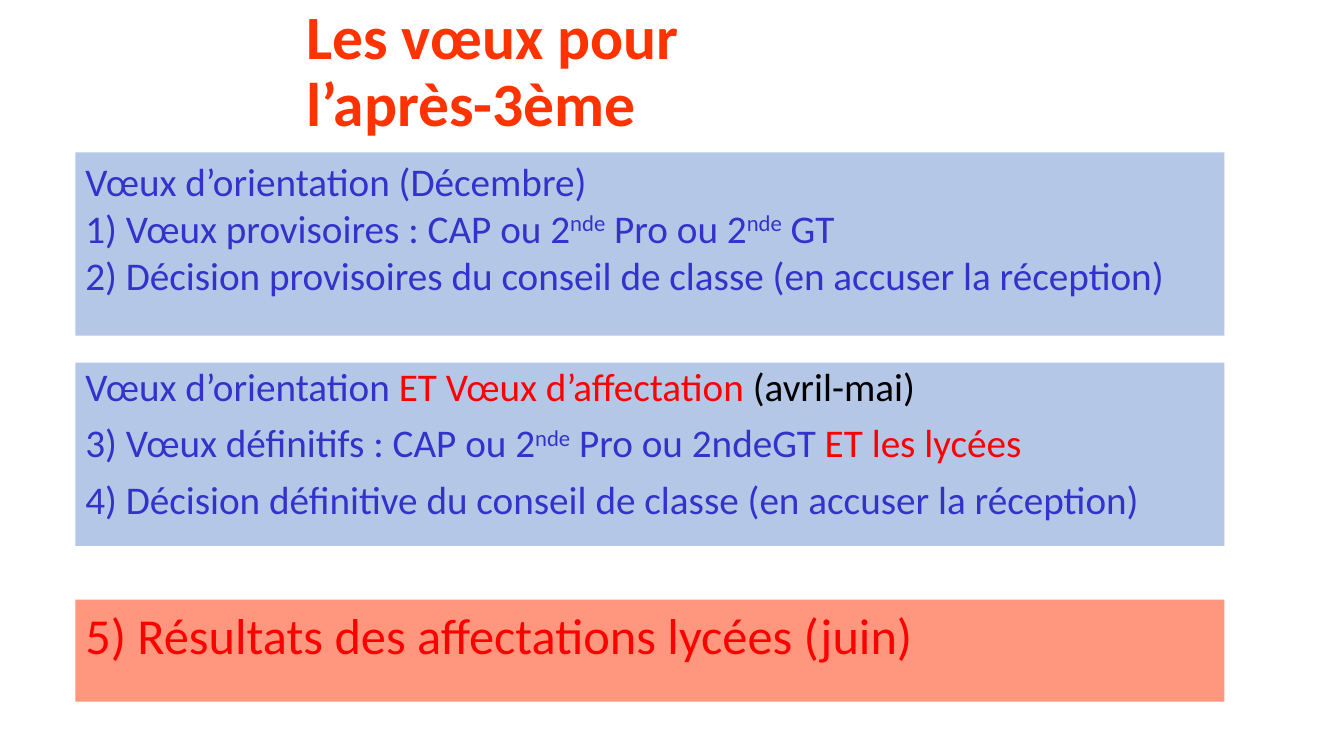
import pptx
import pptx.util
from pptx.dml.color import RGBColor
from pptx.enum.shapes import MSO_SHAPE
from pptx.enum.text import MSO_ANCHOR, MSO_AUTO_SIZE, PP_ALIGN
from pptx.util import Cm


class Theme:
    font = "Calibri"
    title = "FF3300"
    blue, red, black = "3333CC", "FF0000", "000000"
    blue_fill, red_fill = "B4C7E7", "FF967D"
    title_size, body_size, result_size = 44, 28, 36


def add_run(p, text, size, color, bold=False, superscript=False):
    r = p.add_run()
    r.text = text
    r.font.name = Theme.font
    r.font.size = pptx.util.Pt(size)
    r.font.bold = bold
    r.font.color.rgb = RGBColor.from_string(color)
    if superscript:
        r._r.get_or_add_rPr().set("baseline", "30000")


class Deck:
    left, width = Cm(1.9), Cm(28.96)

    def __init__(self, prs, theme):
        self.theme = theme
        self.s = prs.slides.add_slide(prs.slide_layouts[5])

    def title(self, text, left, top, width, height):
        sp = self.s.shapes.title
        sp.left, sp.top, sp.width, sp.height = left, top, width, height
        tf = sp.text_frame
        tf.word_wrap = True
        tf.auto_size = MSO_AUTO_SIZE.NONE
        tf.vertical_anchor = MSO_ANCHOR.MIDDLE
        p = tf.paragraphs[0]
        p.alignment = PP_ALIGN.LEFT
        p.line_spacing = 0.9
        add_run(p, text, self.theme.title_size, self.theme.title, bold=True)

    def panel(self, top, height, fill, size, lines, spacing=1.0, before=0):
        """Each line is a list of (text, colour) runs; "nde" is raised."""
        sp = self.s.shapes.add_shape(MSO_SHAPE.RECTANGLE, self.left, top, self.width, height)
        sp.shadow.inherit = False
        sp.fill.solid()
        sp.fill.fore_color.rgb = RGBColor.from_string(fill)
        sp.line.fill.background()
        tf = sp.text_frame
        tf.word_wrap = True
        tf.vertical_anchor = MSO_ANCHOR.TOP
        for i, line in enumerate(lines):
            p = tf.add_paragraph() if i else tf.paragraphs[0]
            p.alignment = PP_ALIGN.LEFT
            p.line_spacing = spacing
            p.space_before = pptx.util.Pt(before)
            for text, color in line:
                add_run(p, text, size, color, superscript=text == "nde")


def main():
    prs = pptx.Presentation()
    prs.slide_width, prs.slide_height = Cm(33.87), Cm(19.05)
    t = Theme()
    deck = Deck(prs, t)

    deck.title("Les vœux pour l’après-3ème", Cm(7.47), Cm(0), Cm(17.86), Cm(3.68))

    # Final wishes, spring
    deck.panel(Cm(9.14), Cm(4.62), t.blue_fill, t.body_size, [
        [("Vœux d’orientation ", t.blue), ("ET Vœux d’affectation ", t.red),
         ("(avril-mai)", t.black)],
        [("3) Vœux définitifs : CAP ou 2", t.blue), ("nde", t.blue),
         (" Pro ou 2ndeGT ", t.blue), ("ET les lycées", t.red)],
        [("4) Décision définitive du conseil de classe (en accuser la réception)", t.blue)],
    ], spacing=0.9, before=10)

    # Provisional wishes, December
    deck.panel(Cm(3.84), Cm(4.62), t.blue_fill, t.body_size, [
        [("Vœux d’orientation (Décembre)", t.blue)],
        [("1) Vœux provisoires : CAP ou 2", t.blue), ("nde", t.blue),
         (" Pro ou 2", t.blue), ("nde", t.blue), (" GT", t.blue)],
        [("2) Décision provisoires du conseil de classe (en accuser la réception)", t.blue)],
    ])

    # Results, June
    deck.panel(Cm(15.11), Cm(2.57), t.red_fill, t.result_size,
               [[("5) Résultats des affectations lycées (juin)", t.red)]])

    prs.save("out.pptx")


if __name__ == "__main__":
    main()
